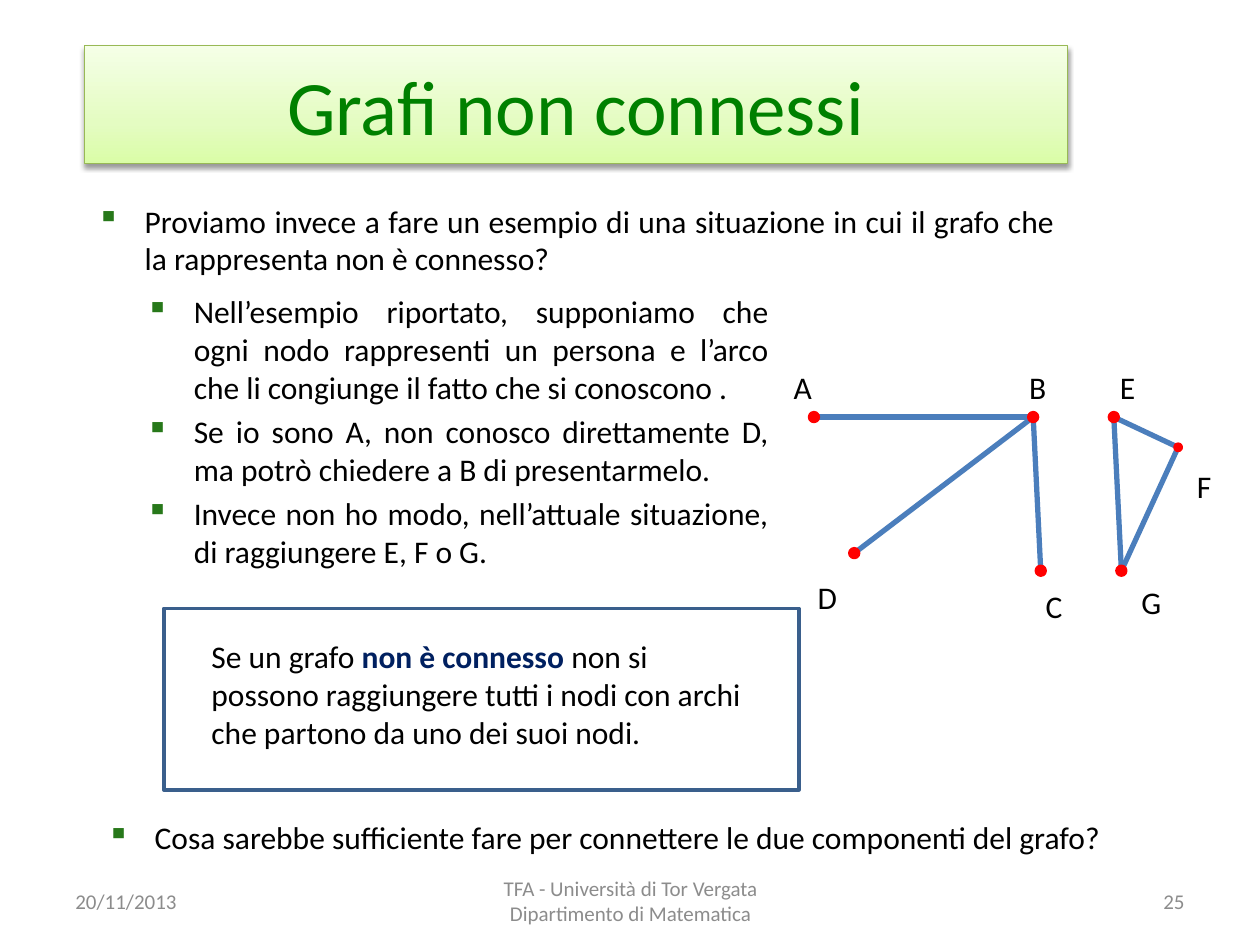
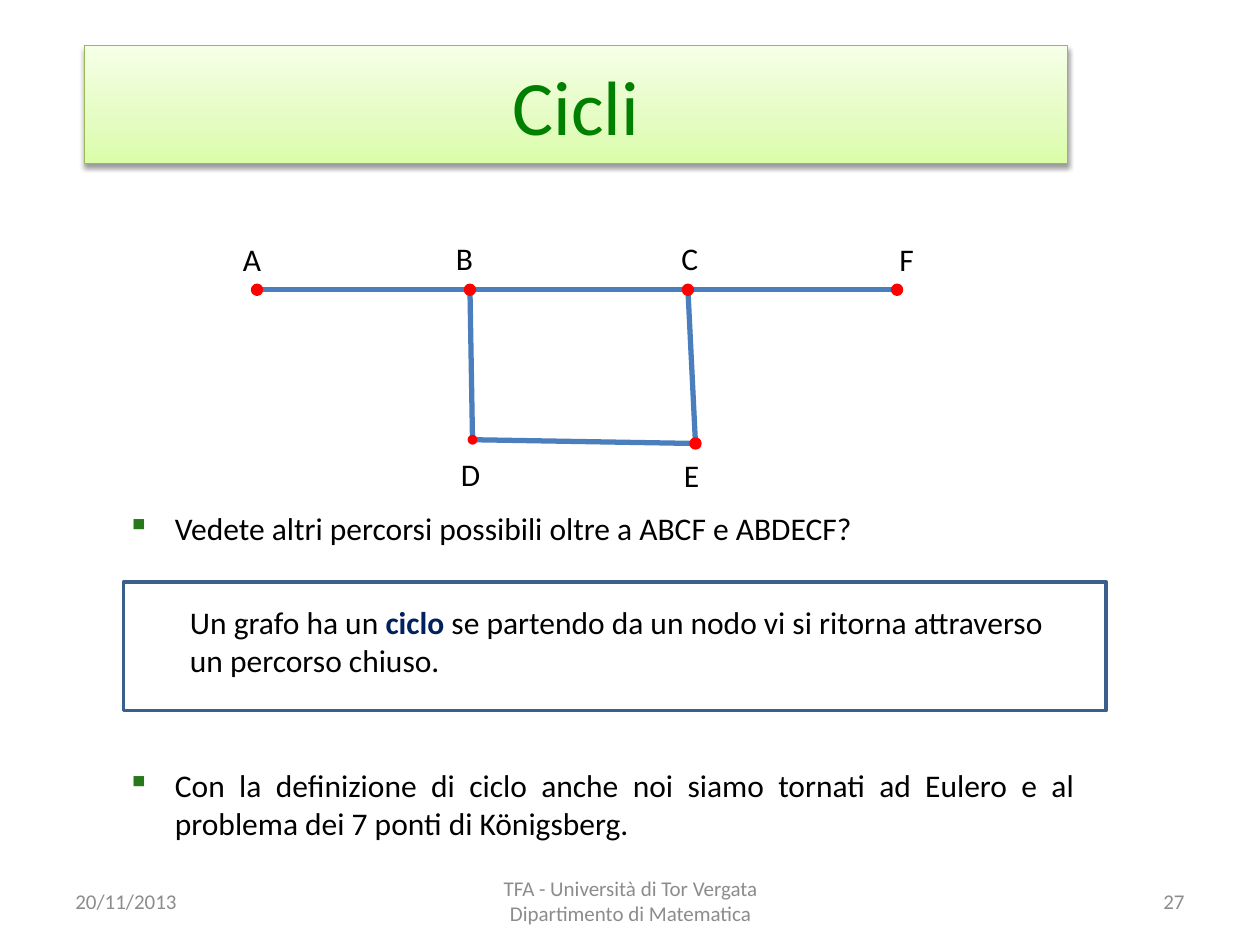
from dataclasses import dataclass
import lxml.etree
import pptx
import pptx.dml.color
import pptx.enum.shapes
import pptx.enum.text
import pptx.oxml.ns
import pptx.util

Align = pptx.enum.text.PP_ALIGN
Anchor = pptx.enum.text.MSO_ANCHOR
Shape = pptx.enum.shapes.MSO_SHAPE
qn = pptx.oxml.ns.qn


@dataclass(frozen=True)
class Theme:
    font: str = "Calibri"
    title_size: int = 44
    body_size: int = 18
    footer_size: int = 12
    text: str = "000000"
    title: str = "008000"
    title_line: str = "98B955"
    title_stops: tuple = ((0, "DAFDA7"), (35, "E4FCC2"), (100, "F5FFE7"))
    footer: str = "8C8C8C"
    bullet: str = "27781A"
    keyword: str = "002060"
    edge: str = "4B7EBC"
    node: str = "FF0000"
    frame: str = "3A5F8C"


@dataclass(frozen=True)
class Node:
    column: float
    row: float
    label_column: float
    label_row: float
    size: float = 0.7


THEME = Theme()
# The page is a grid of 100 columns by 75 rows of square cells
COLUMNS, ROWS = 100, 75
CELL = pptx.util.Inches(0.1)
FOOTER_ROW, FOOTER_HEIGHT = 69.5, 4


def cells(*counts):
    return [round(count * CELL) for count in counts]


def color(value):
    return pptx.dml.color.RGBColor.from_string(value)


def style_font(font, size, value):
    font.name = THEME.font
    font.size = pptx.util.Pt(size)
    font.color.rgb = color(value)


def style_line(line, value, width):
    line.color.rgb = color(value)
    line.width = pptx.util.Pt(width)


def add_child(parent, tag, **attributes):
    return lxml.etree.SubElement(parent, qn(tag), **attributes)


# Text elements
def add_box(page, area, anchor=Anchor.TOP, wrap=True):
    frame = page.shapes.add_textbox(*cells(*area)).text_frame
    frame.word_wrap = wrap
    frame.vertical_anchor = anchor
    return frame


def add_title(page, text):
    title = page.shapes.title
    title.left, title.top, title.width, title.height = cells(6.7, 3.6, 78, 9.4)
    title.fill.gradient()
    title.fill.gradient_angle = 90
    properties = title.element.spPr
    stops = properties.find(".//" + qn("a:gsLst"))
    for stop in list(stops):
        stops.remove(stop)
    for share, value in THEME.title_stops:
        stop = add_child(stops, "a:gs", pos=str(share * 1000))
        add_child(stop, "a:srgbClr", val=value)
    style_line(title.line, THEME.title_line, 0.75)

    # Soft shadow straight below the band
    effects = add_child(properties, "a:effectLst")
    shadow = add_child(effects, "a:outerShdw", blurRad=str(pptx.util.Pt(3.1)),
                       dist=str(pptx.util.Pt(1.6)), dir="5400000", rotWithShape="0")
    shade = add_child(shadow, "a:srgbClr", val="000000")
    add_child(shade, "a:alpha", val="38000")

    title.text_frame.text = text
    title.text_frame.vertical_anchor = Anchor.MIDDLE
    para = title.text_frame.paragraphs[0]
    para.alignment = Align.CENTER
    style_font(para.font, THEME.title_size, THEME.title)


def add_footers(page, number):
    footers = (
        (5, 23.3, Align.LEFT, ["20/11/2013"]),
        (34.2, 31.7, Align.CENTER,
         ["TFA - Università di Tor Vergata", "Dipartimento di Matematica"]),
        (71.7, 23.3, Align.RIGHT, [str(number)]),
    )
    for column, width, alignment, lines in footers:
        frame = add_box(page, (column, FOOTER_ROW, width, FOOTER_HEIGHT), Anchor.MIDDLE)
        para = frame.paragraphs[0]
        para.alignment = alignment
        for index, line in enumerate(lines):
            if index:
                para.add_line_break()
            para.add_run().text = line
        style_font(para.font, THEME.footer_size, THEME.footer)


def add_bullets(page, area, *texts):
    frame = add_box(page, area)
    for index, text in enumerate(texts):
        para = frame.add_paragraph() if index else frame.paragraphs[0]
        para.text = text
        para.alignment = Align.JUSTIFY
        if index:
            para.space_before = pptx.util.Pt(0.2 * THEME.body_size)
        properties = para._p.get_or_add_pPr()
        indent = pptx.util.Inches(0.38)
        properties.set("marL", str(indent))
        properties.set("indent", str(-indent))
        bullet = add_child(properties, "a:buClr")
        add_child(bullet, "a:srgbClr", val=THEME.bullet)
        add_child(properties, "a:buChar", char="▪")
        style_font(para.font, THEME.body_size, THEME.text)


def add_definition(page, frame_area, text_area, before, keyword, after):
    para = add_box(page, text_area).paragraphs[0]
    style_font(para.font, THEME.body_size, THEME.text)
    for text in (before, keyword, after):
        span = para.add_run()
        span.text = text
        if text == keyword:
            span.font.bold = True
            span.font.color.rgb = color(THEME.keyword)
    outline = page.shapes.add_shape(Shape.RECTANGLE, *cells(*frame_area))
    outline.shadow.inherit = False
    outline.fill.background()
    style_line(outline.line, THEME.frame, 2)


# Graph elements
def add_edge(page, start, end):
    edge = page.shapes.add_connector(
        pptx.enum.shapes.MSO_CONNECTOR.STRAIGHT,
        *cells(start.column, start.row, end.column, end.row))
    style_line(edge.line, THEME.edge, 3)
    add_child(edge.element.spPr, "a:effectLst")


def add_node(page, name, node):
    half = node.size / 2
    dot = page.shapes.add_shape(
        Shape.OVAL, *cells(node.column - half, node.row - half, node.size, node.size))
    dot.shadow.inherit = False
    dot.fill.solid()
    dot.fill.fore_color.rgb = color(THEME.node)
    style_line(dot.line, THEME.node, 2)
    label = add_box(page, (node.label_column, node.label_row, 3.4, 4), wrap=False)
    label.text = name
    style_font(label.paragraphs[0].font, THEME.body_size, THEME.text)


def add_graph(page, nodes, edges):
    for start, end in edges:
        add_edge(page, nodes[start], nodes[end])
    for name, node in nodes.items():
        add_node(page, name, node)


# Pages
def add_page(deck, title, number):
    page = deck.slides.add_slide(deck.slide_layouts.get_by_name("Title Only"))
    add_title(page, title)
    add_footers(page, number)
    return page


def build_disconnected(deck):
    page = add_page(deck, "Grafi non connessi", 25)
    add_bullets(page, (6.7, 15.5, 78, 5.5),
                "Proviamo invece a fare un esempio di una situazione in cui il grafo "
                "che la rappresenta non è connesso?")
    add_bullets(page, (10.6, 22.7, 51.4, 22.6),
                "Nell’esempio riportato, supponiamo che ogni nodo rappresenti un persona "
                "e l’arco che li congiunge il fatto che si conoscono .",
                "Se io sono A, non conosco direttamente D, ma potrò chiedere a B di "
                "presentarmelo.",
                "Invece non ho modo, nell’attuale situazione, di raggiungere E, F o G.")
    nodes = {
        "A": Node(64.6, 33.1, 62, 28.7),
        "B": Node(82, 33.1, 80.7, 28.7),
        "C": Node(82.6, 45.3, 82, 46.1),
        "D": Node(67.8, 43.9, 63.9, 45.4),
        "E": Node(88.4, 33.1, 87.9, 28.7),
        "F": Node(93.5, 35.5, 94, 36.6, 0.5),
        "G": Node(89, 45.3, 89.6, 45.8),
    }
    add_graph(page, nodes, ("AB", "BC", "BD", "EG", "GF", "EF"))
    add_definition(page, (13, 48.3, 50.4, 14.4), (15.8, 50.1, 45.3, 11),
                   "Se un grafo ", "non è connesso ",
                   "non si possono raggiungere tutti i nodi con archi che partono da uno "
                   "dei suoi nodi.")
    add_bullets(page, (7.5, 64.4, 81.6, 3.8),
                "Cosa sarebbe sufficiente fare per connettere le due componenti del grafo?")


def build_cycles(deck):
    page = add_page(deck, "Cicli", 27)
    nodes = {
        "A": Node(20.4, 23, 18.3, 18.6),
        "B": Node(37.3, 23, 35.2, 18.5),
        "C": Node(54.6, 23, 53.1, 18.5),
        "D": Node(37.5, 34.9, 35.6, 35.6, 0.5),
        "E": Node(55.2, 35.2, 53.3, 35.7),
        "F": Node(71.2, 23, 70.4, 18.6),
    }
    add_graph(page, nodes, ("AB", "BC", "CF", "BD", "DE", "CE"))
    add_bullets(page, (9.1, 39.9, 77.2, 5.2),
                "Vedete altri percorsi possibili oltre a ABCF e ABDECF?")
    add_definition(page, (9.8, 46.2, 78, 10.2), (14.1, 47.4, 70, 7.9),
                   "Un grafo ha un ", "ciclo",
                   " se partendo da un nodo vi si ritorna attraverso un percorso chiuso.")
    add_bullets(page, (9.1, 60.3, 77.2, 5.2),
                "Con la definizione di ciclo anche noi siamo tornati ad Eulero e al "
                "problema dei 7 ponti di Königsberg.")


def main():
    deck = pptx.Presentation()
    deck.slide_width, deck.slide_height = cells(COLUMNS, ROWS)
    build_disconnected(deck)
    build_cycles(deck)
    deck.save("out.pptx")


if __name__ == "__main__":
    main()
